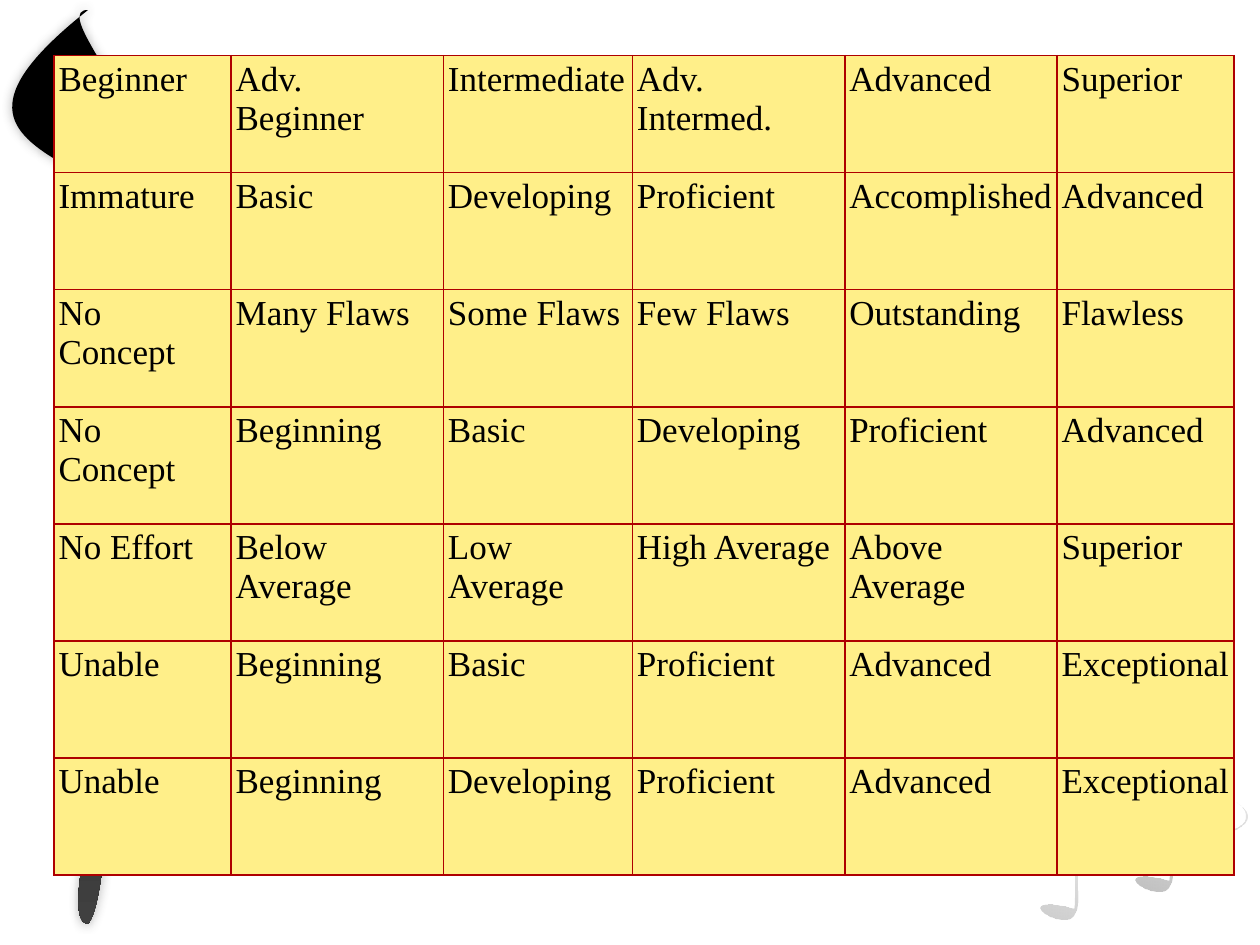
import pptx
import pptx.dml.color
import pptx.oxml
import pptx.oxml.ns
import pptx.util
from lxml import etree

Cm = pptx.util.Cm
Pt = pptx.util.Pt
RGBColor = pptx.dml.color.RGBColor
qn = pptx.oxml.ns.qn

BLACK = RGBColor(0x00, 0x00, 0x00)
CHARCOAL = RGBColor(0x40, 0x40, 0x40)
YELLOW = RGBColor(0xFF, 0xEF, 0x89)
RED = RGBColor(0xAE, 0x00, 0x00)

# Outlines in cm from the corner of their box: a start, then three points a curve.
PEN = [
    (5.2, 8.33), (5.43, 4.27), (4.16, 7.29), (4.14, 7.29),
    (9.27, 5.26), (3.27, 0), (4.52, 0),
    (0, 3.58), (6.88, 2.62), (7.26, 6.43),
    (7.85, 3.79), (5.94, 5.49), (5.48, 7.5),
    (5.03, 9.48), (5.15, 17.68), (4.52, 18.42),
    (3.27, 18.42), (8.46, 5.06), (5.2, 8.33),
]
NOTE = [
    (1.92, 1.69), (1.62, 1.75), (0.88, 2.11), (0.57, 1.98),
    (1.04, 1.01), (0.19, 0.21), (0, 0.94),
    (0.21, 0), (1.06, 1.32), (0.92, 1.91),
    (1.26, 1.95), (1.75, 1.59), (1.99, 1.64),
    (2.54, 1.66), (2.07, 3.18), (1.92, 1.69),
]
NOTE_ROTATION = 109.4
# Left and top in cm, then the opacity in percent at both ends of the gradient.
NOTES = [(0, 1.7, 20, 5), (1.22, 0, 35, 20), (1.91, 1.14, 25, 10)]

RATINGS = [
    ["Beginner", "Adv. Beginner", "Intermediate", "Adv. Intermed.", "Advanced", "Superior"],
    ["Immature", "Basic", "Developing", "Proficient", "Accomplished", "Advanced"],
    ["No Concept", "Many Flaws", "Some Flaws", "Few Flaws", "Outstanding", "Flawless"],
    ["No Concept", "Beginning", "Basic", "Developing", "Proficient", "Advanced"],
    ["No Effort", "Below Average", "Low Average", "High Average", "Above Average", "Superior"],
    ["Unable", "Beginning", "Basic", "Proficient", "Advanced", "Exceptional"],
    ["Unable", "Beginning", "Developing", "Proficient", "Advanced", "Exceptional"],
]
COLUMN_WIDTHS = [3.57, 4.28, 3.81, 4.28, 4.28, 3.57]
CELL_FORMAT = {f"margin_{side}": Cm(0.09) for side in ("left", "right", "top", "bottom")}
FONT_FORMAT = {"name": "Times New Roman", "size": Pt(20), "bold": False}


def set_attributes(target, values):
    for name, value in values.items():
        setattr(target, name, value)


def add_alpha(color_element, percent):
    etree.SubElement(color_element, qn("a:alpha"), val=str(percent * 1000))


def add_curved_outline(shapes, left, top, points):
    """Build a freeform on the control points, then bend each three lines into a curve."""
    start, *controls = [(Cm(x), Cm(y)) for x, y in points]
    builder = shapes.build_freeform(*start)
    builder.add_line_segments(controls, close=True)
    outline = builder.convert_to_shape(left, top)
    lines = list(outline._element.iter(qn("a:lnTo")))
    for first in range(0, len(lines), 3):
        curve = etree.Element(qn("a:cubicBezTo"))
        lines[first].addprevious(curve)
        for line in lines[first:first + 3]:
            curve.append(line[0])
            line.getparent().remove(line)
    outline.line.fill.background()
    outline.shadow.inherit = False
    return outline


def fill_gradient(shape, angle, stops):
    """Fill from (position, colour, opacity percent) stops."""
    shape.fill.gradient()
    shape.fill.gradient_angle = angle
    for stop, (position, color, opacity) in zip(shape.fill.gradient_stops, stops):
        stop.position = position
        stop.color.rgb = color
    if any(opacity < 100 for _, _, opacity in stops):
        gradient = shape._element.spPr.find(qn("a:gradFill"))
        for color_element, stop in zip(gradient.iter(qn("a:srgbClr")), stops):
            add_alpha(color_element, stop[2])


def add_pen(slide, left, top):
    pen = add_curved_outline(slide.shapes, left, top, PEN)
    fill_gradient(pen, 270, [(0.25, BLACK, 100), (1, CHARCOAL, 100)])
    effects = pen._element.spPr.find(qn("a:effectLst"))
    glow = etree.SubElement(effects, qn("a:outerShdw"), blurRad=str(Pt(6)),
                            dist="0", dir="0", algn="ctr", rotWithShape="0")
    add_alpha(etree.SubElement(glow, qn("a:srgbClr"), val=str(CHARCOAL)), 40)


def add_notes(slide, left, top):
    group = slide.shapes.add_group_shape()
    for x, y, start_opacity, end_opacity in NOTES:
        note = add_curved_outline(group.shapes, left + Cm(x), top + Cm(y), NOTE)
        note.rotation = NOTE_ROTATION
        fill_gradient(note, 180, [(0, BLACK, start_opacity), (1, BLACK, end_opacity)])


def add_borders(cell):
    properties = cell._tc.get_or_add_tcPr()
    for edge in ("a:lnL", "a:lnR", "a:lnT", "a:lnB"):
        border = etree.SubElement(properties, qn(edge), w=str(Pt(1)))
        fill = etree.SubElement(border, qn("a:solidFill"))
        etree.SubElement(fill, qn("a:srgbClr"), val=str(RED))


def add_ratings(slide, left, top, width, height):
    frame = slide.shapes.add_table(len(RATINGS), len(COLUMN_WIDTHS), left, top, width, height)
    table = frame.table
    set_attributes(table, {"first_row": False, "horz_banding": False})
    for column, column_width in zip(table.columns, COLUMN_WIDTHS):
        column.width = Cm(column_width)
    for row, labels in zip(table.rows, RATINGS):
        for cell, label in zip(row.cells, labels):
            add_borders(cell)
            cell.fill.solid()
            cell.fill.fore_color.rgb = YELLOW
            set_attributes(cell, CELL_FORMAT)
            cell.text = label
            font = cell.text_frame.paragraphs[0].runs[0].font
            set_attributes(font, FONT_FORMAT)
            font.color.rgb = BLACK


def main():
    deck = pptx.Presentation()
    set_attributes(deck, {"slide_width": Cm(25.4), "slide_height": Cm(19.05)})
    slide = deck.slides.add_slide(deck.slide_layouts[6])
    add_pen(slide, Cm(-2.74), Cm(0.2))
    add_notes(slide, Cm(20.7), Cm(14.43))
    add_ratings(slide, Cm(1.09), Cm(1.12), Cm(sum(COLUMN_WIDTHS)), Cm(16.52))
    deck.save("out.pptx")


if __name__ == "__main__":
    main()
